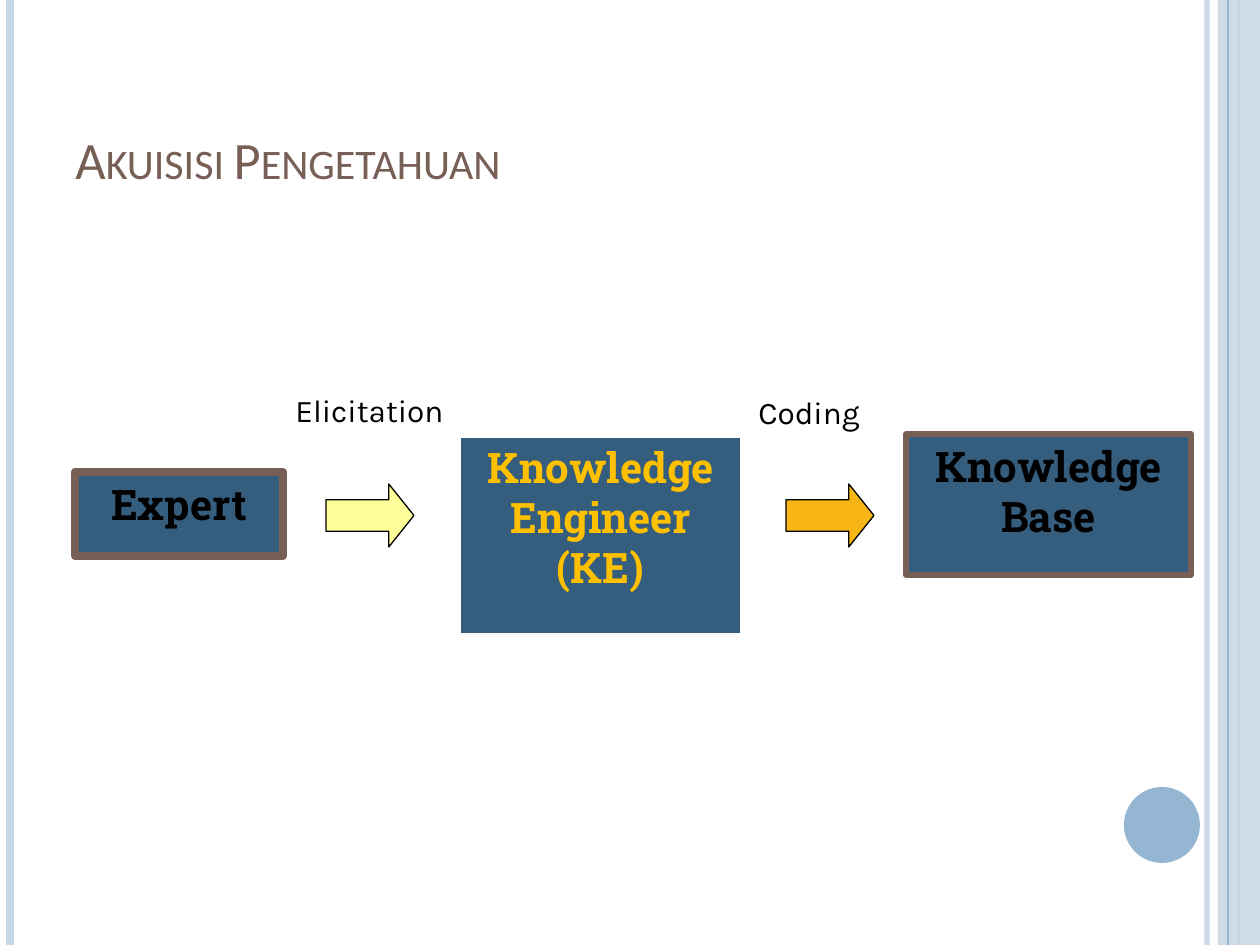
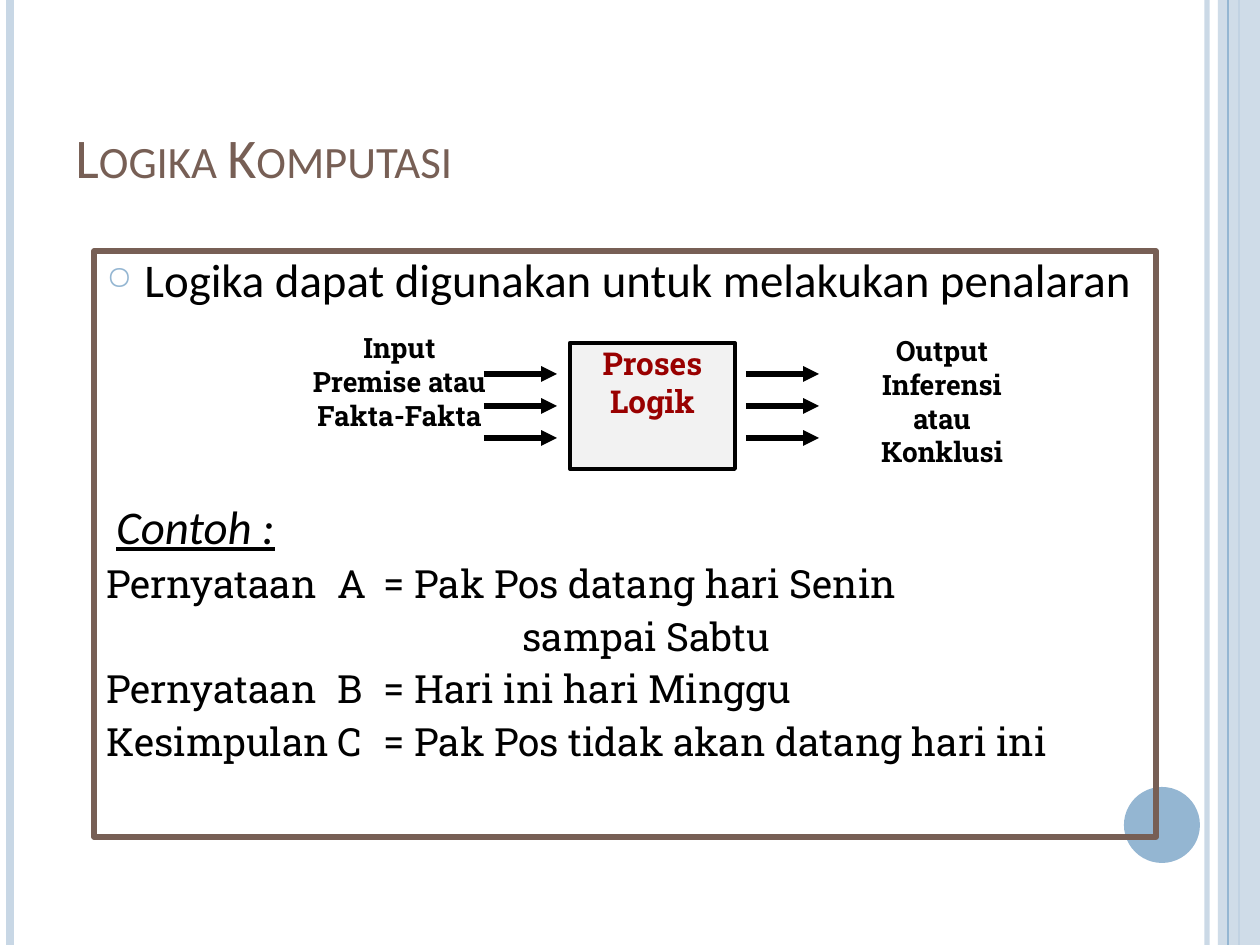
from dataclasses import dataclass

from pptx import Presentation
from pptx.dml.color import RGBColor
from pptx.enum import shapes, text
from pptx.oxml.ns import qn
from pptx.util import Emu, Pt
from lxml import etree

PX = 914400 / 126
WIDE, HIGH = 1260, 945
KIND = shapes.MSO_SHAPE
MID = text.PP_ALIGN.CENTER


@dataclass(frozen=True)
class Theme:
    sans: str = "Calibri"
    slab: str = "Roboto Slab"
    label: str = "Karla"
    black: str = "000000"
    white: str = "FFFFFF"
    brown: str = "775F55"
    navy: str = "355D7E"
    sky: str = "94B6D2"
    pale: str = "C8D7E5"
    gold: str = "FFC000"
    lemon: str = "FFFF99"
    amber: str = "F7B615"
    grey: str = "F2F2F2"
    red: str = "990000"
    lead: float = 26.8
    node: float = 24
    body: float = 22.2
    small: float = 18
    note: float = 16


T = Theme()


def px(n):
    return Emu(round(n * PX))


def rgb(code):
    return RGBColor.from_string(code)


def add(parent, tag, **attrs):
    node = etree.SubElement(parent, qn(tag))
    for key, value in attrs.items():
        node.set(key, str(value))
    return node


def fade(item, percent):
    """Make the solid colour of a shape fill or a connector line see-through."""
    color = next(item._element.spPr.iter(qn("a:srgbClr")))
    add(color, "a:alpha", val=percent * 1000)


class Deck:
    def __init__(self):
        self.file = Presentation()
        self.file.slide_width, self.file.slide_height = px(WIDE), px(HIGH)

    def page(self, title, size):
        self.slide = self.file.slides.add_slide(self.file.slide_layouts[6])
        self.trim()
        frame = self.label(63, 38, 1029, 158)
        frame.vertical_anchor = text.MSO_ANCHOR.BOTTOM
        para = self.para(frame, title, T.sans, size, T.brown)
        para.runs[0]._r.get_or_add_rPr().set("cap", "small")

    def trim(self):
        """Draw the edge bands and the dot that every slide has."""
        fade(self.rule(1207, T.pale, 3), 93)
        self.rule(10, T.pale, 4.5)
        self.rule(1239, T.sky, 1.5)
        fade(self.shape(KIND.RECTANGLE, 1218, 0, 42, HIGH, T.pale), 87)
        self.rule(1228, T.sky, 0.75)
        self.shape(KIND.OVAL, 1124, 787, 76, 76, T.sky)

    def rule(self, x, color, width):
        return self.line(x, 0, x, HIGH, color, width)

    def line(self, x1, y1, x2, y2, color, width):
        kind = shapes.MSO_CONNECTOR.STRAIGHT
        line = self.slide.shapes.add_connector(kind, px(x1), px(y1), px(x2), px(y2))
        line.line.color.rgb = rgb(color)
        line.line.width = Pt(width)
        add(line._element.spPr, "a:effectLst")
        return line

    def arrow(self, x1, x2, y):
        line = self.line(x1, y, x2, y, T.black, 3)
        add(line.line._get_or_add_ln(), "a:tailEnd", type="triangle")

    def shape(self, kind, x, y, w, h, fill=None, edge=None, width=1):
        item = self.slide.shapes.add_shape(kind, px(x), px(y), px(w), px(h))
        item.shadow.inherit = False
        if fill:
            item.fill.solid()
            item.fill.fore_color.rgb = rgb(fill)
        else:
            item.fill.background()
        if edge:
            item.line.color.rgb = rgb(edge)
            item.line.width = Pt(width)
        else:
            item.line.fill.background()
        item.text_frame.vertical_anchor = text.MSO_ANCHOR.TOP
        return item

    def label(self, x, y, w, h):
        frame = self.slide.shapes.add_textbox(px(x), px(y), px(w), px(h)).text_frame
        frame.word_wrap = True
        return frame

    def para(self, frame, words, face, size, color, bold=False,
             align=text.PP_ALIGN.LEFT, bullet=None, tabs=(), indent=0):
        """Fill the empty first paragraph, or append one."""
        first = frame.paragraphs[0]
        para = frame.add_paragraph() if first.runs else first
        para.text = words
        para.alignment = align
        props = para._p.get_or_add_pPr()
        if indent:
            props.set("marL", str(px(indent)))
        if bullet:
            props.set("indent", str(-px(indent)))
            add(add(props, "a:buClr"), "a:srgbClr", val=T.sky)
            add(props, "a:buSzPct", val=70000)
            add(props, "a:buChar", char=bullet)
        if tabs:
            stops = add(props, "a:tabLst")
            for stop in tabs:
                add(stops, "a:tab", pos=px(stop), algn="l")
        font = para.font
        font.name, font.size, font.bold = face, Pt(size), bold
        font.color.rgb = rgb(color)
        return para

    def node(self, words, x, y, w, h, edge, width, color):
        box = self.shape(KIND.RECTANGLE, x, y, w, h, T.navy, edge, width)
        self.para(box.text_frame, words, T.slab, T.node, color, True, MID)

    def stack(self, frame, lines, size, color):
        """Set bold centred lines in a frame with thin margins."""
        frame.margin_left = frame.margin_right = px(1)
        frame.margin_top = frame.margin_bottom = px(1)
        for words in lines:
            self.para(frame, words, T.slab, size, color, True, MID)


def gain(deck):
    deck.page("Akuisisi Pengetahuan", 30)
    deck.node("Expert", 75, 472, 208, 84, T.brown, 4.5, T.black)
    deck.node("Knowledge Base", 906, 434, 285, 141, T.brown, 3, T.black)
    deck.node("Knowledge Engineer (KE)", 458, 435, 285, 201, T.white, 3, T.gold)
    for x, fill in ((326, T.lemon), (786, T.amber)):
        arrow = deck.shape(KIND.RIGHT_ARROW, x, 484, 88, 63, fill, T.black, 0.75)
        arrow.adjustments[1] = 0.4
    for words, x, y in (("Elicitation", 283, 385), ("Coding", 746, 387)):
        deck.para(deck.label(x, y, 175, 60), words, T.label, T.small, T.black)


def logic(deck):
    deck.page("Logika Komputasi", 32)
    frame = deck.shape(KIND.RECTANGLE, 94, 251, 1062, 586, None, T.brown, 3).text_frame
    deck.para(frame, "Logika dapat digunakan untuk melakukan penalaran",
              T.sans, T.lead, T.black, bullet="○", indent=38)
    case = deck.para(frame, "Contoh :", T.sans, T.lead, T.black, indent=10)
    case.font.italic = case.font.underline = True
    for words, indent in (
        ("Pernyataan\tA\t= Pak Pos datang hari Senin", 0),
        ("sampai Sabtu", 416),
        ("Pernyataan\tB\t= Hari ini hari Minggu", 0),
        ("Kesimpulan\tC\t= Pak Pos tidak akan datang hari ini", 0),
    ):
        deck.para(frame, words, T.slab, T.body, T.black,
                  tabs=() if indent else (231, 277), indent=indent)
    for para in frame.paragraphs:
        para.line_spacing = 0.9
    for para in frame.paragraphs[1:]:
        para.space_before = Pt(6)
    case.space_before = Pt(112)

    box = deck.shape(KIND.RECTANGLE, 570, 343, 165, 126, T.grey, T.black, 2.25)
    deck.stack(box.text_frame, ("Proses", "Logik"), T.small, T.red)
    deck.stack(deck.label(305, 330, 189, 160),
               ("Input", "Premise atau", "Fakta-Fakta"), T.note, T.black)
    deck.stack(deck.label(852, 333, 180, 160),
               ("Output", "Inferensi\vatau", "Konklusi"), T.note, T.black)
    for x in (484, 746):
        for row in range(3):
            deck.arrow(x, x + 73, 374 + 32 * row)


def main():
    deck = Deck()
    gain(deck)
    logic(deck)
    deck.file.save("out.pptx")


if __name__ == "__main__":
    main()
